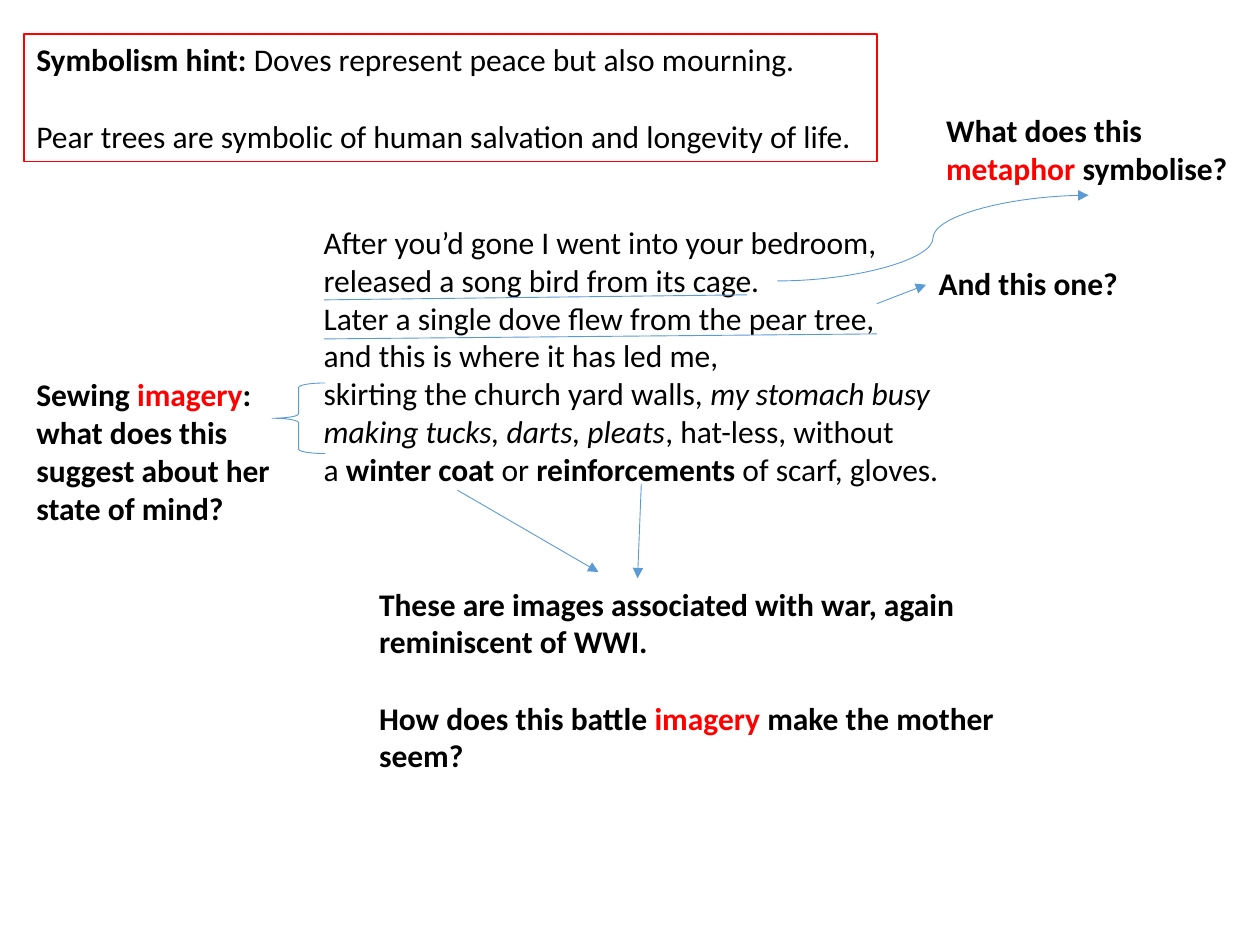
import pptx
import pptx.dml.color
import pptx.enum.shapes
import pptx.enum.text
import pptx.oxml.xmlchemy
import pptx.util
from pptx.util import Inches

COLOURS = {"ink": "000000", "accent": "FF0000", "arrow": "5B9BD5"}
FONT = "Calibri"
SIZE = pptx.util.Pt(18)
LINE_GAP = pptx.util.Pt(22)
SHAPES = pptx.enum.shapes.MSO_SHAPE
CONNECTORS = pptx.enum.shapes.MSO_CONNECTOR


def colour(name):
    """Look up a named colour."""
    return pptx.dml.color.RGBColor.from_string(COLOURS[name])


def write_paras(shape, paras, gap=0, indent=0):
    """Fill a shape with paragraphs of (text, style) spans: b bold, i italic, r red."""
    frame = shape.text_frame
    frame.word_wrap = True
    frame.vertical_anchor = pptx.enum.text.MSO_ANCHOR.TOP
    for index, spans in enumerate(paras):
        para = frame.paragraphs[0] if index == 0 else frame.add_paragraph()
        para.alignment = pptx.enum.text.PP_ALIGN.LEFT
        para.space_before = pptx.util.Emu(gap if index else 0)
        if indent:
            para._p.get_or_add_pPr().set("marL", str(indent))
        for text, style in spans:
            span = para.add_run()
            span.text = text
            span.font.name = FONT
            span.font.size = SIZE
            span.font.bold = "b" in style
            span.font.italic = "i" in style
            span.font.color.rgb = colour("accent" if "r" in style else "ink")


def add_text(page, box, paras, gap=0, indent=0):
    """Add a wrapped text box."""
    shape = page.shapes.add_textbox(*map(Inches, box))
    write_paras(shape, paras, gap, indent)


def add_line(page, start, end, arrow=True, kind=CONNECTORS.STRAIGHT):
    """Add a thin connector, with an arrowhead at its end if wanted."""
    line = page.shapes.add_connector(kind, *map(Inches, (*start, *end)))
    line.line.color.rgb = colour("arrow")
    line.line.width = pptx.util.Pt(0.5)
    if arrow:
        head = pptx.oxml.xmlchemy.OxmlElement("a:tailEnd")
        head.set("type", "triangle")
        line.line._get_or_add_ln().append(head)
    line._element.spPr.append(pptx.oxml.xmlchemy.OxmlElement("a:effectLst"))


def add_outline(page, kind, box, name, width):
    """Add an unfilled outlined shape."""
    shape = page.shapes.add_shape(kind, *map(Inches, box))
    shape.shadow.inherit = False
    shape.fill.background()
    shape.line.color.rgb = colour(name)
    shape.line.width = pptx.util.Pt(width)
    return shape


def draw_hint(page, box):
    """Draw the framed symbolism hint."""
    frame = add_outline(page, SHAPES.RECTANGLE, box, "accent", 0.75)
    write_paras(frame, [
        [("Symbolism hint: ", "b"), ("Doves represent peace but also mourning.", "")],
        [("Pear trees are symbolic of human salvation and longevity of life.", "")],
    ], gap=LINE_GAP)


def draw_poem(page, box):
    """Draw the poem and underline its two metaphors."""
    left, top, _, _ = box
    add_text(page, box, [
        [("After you’d gone I went into your bedroom,", "")],
        [("released a song bird from its cage.", "")],
        [("Later a single dove flew from the pear tree,", "")],
        [("and this is where it has led me,", "")],
        [("skirting the church yard walls, ", ""), ("my stomach busy", "i")],
        [("making tucks, darts, pleats", "i"), (", hat-less, without", "")],
        [("a ", ""), ("winter coat ", "b"), ("or ", ""), ("reinforcements ", "b"),
         ("of scarf, gloves.", "")],
    ], indent=Inches(0.1))
    for drop, length in ((0.66, 3.36), (0.97, 4.39)):
        start = (left + 0.2, top + drop)
        add_line(page, start, (start[0] + length, start[1] - 0.04), arrow=False)


def draw_metaphor_question(page, box):
    """Draw the song bird question with its curved arrow."""
    left, top, _, _ = box
    add_text(page, box, [[("What does this ", "b"), ("metaphor", "br"), (" symbolise?", "b")]])
    add_line(page, (left - 1.24, top + 1.4), (left + 1.23, top + 0.72), kind=CONNECTORS.CURVE)


def draw_dove_question(page, box):
    """Draw the dove question with its arrow."""
    left, top, _, _ = box
    add_text(page, box, [[("And this one?", "b")]])
    add_line(page, (left - 0.39, top + 0.36), (left, top + 0.21))


def draw_sewing_question(page, box):
    """Draw the sewing question with the brace that joins it to the poem."""
    left, top, width, _ = box
    add_text(page, box, [[
        ("Sewing ", "b"), ("imagery", "br"),
        (": what does this suggest about her state of mind?", "b"),
    ]])
    brace = (left + width - 0.12, top + 0.11, 0.42, 0.56)
    add_outline(page, SHAPES.LEFT_BRACE, brace, "arrow", 0.5)


def draw_war_question(page, box):
    """Draw the war imagery question with its two arrows."""
    left, top, _, _ = box
    add_text(page, box, [
        [("These are images associated with war, again reminiscent of WWI.", "b")],
        [("How does this battle ", "b"), ("imagery ", "br"), ("make the mother seem?", "b")],
    ], gap=LINE_GAP)
    add_line(page, (left + 0.72, top - 0.7), (left + 1.84, top - 0.05))
    add_line(page, (left + 2.18, top - 0.75), (left + 2.15, top))


def main():
    """Build the annotated poem slide."""
    deck = pptx.Presentation()
    deck.slide_width, deck.slide_height = Inches(10), Inches(7.5)
    page = deck.slides.add_slide(deck.slide_layouts[6])
    draw_poem(page, (2.37, 1.72, 5.98, 2.22))
    draw_metaphor_question(page, (7.41, 0.83, 2.75, 0.71))
    draw_dove_question(page, (7.35, 2.05, 2.75, 0.4))
    draw_hint(page, (0.19, 0.27, 6.77, 1.01))
    draw_sewing_question(page, (0.19, 2.93, 2.09, 1.31))
    draw_war_question(page, (2.91, 4.59, 5.19, 1.62))
    deck.save("out.pptx")


if __name__ == "__main__":
    main()
